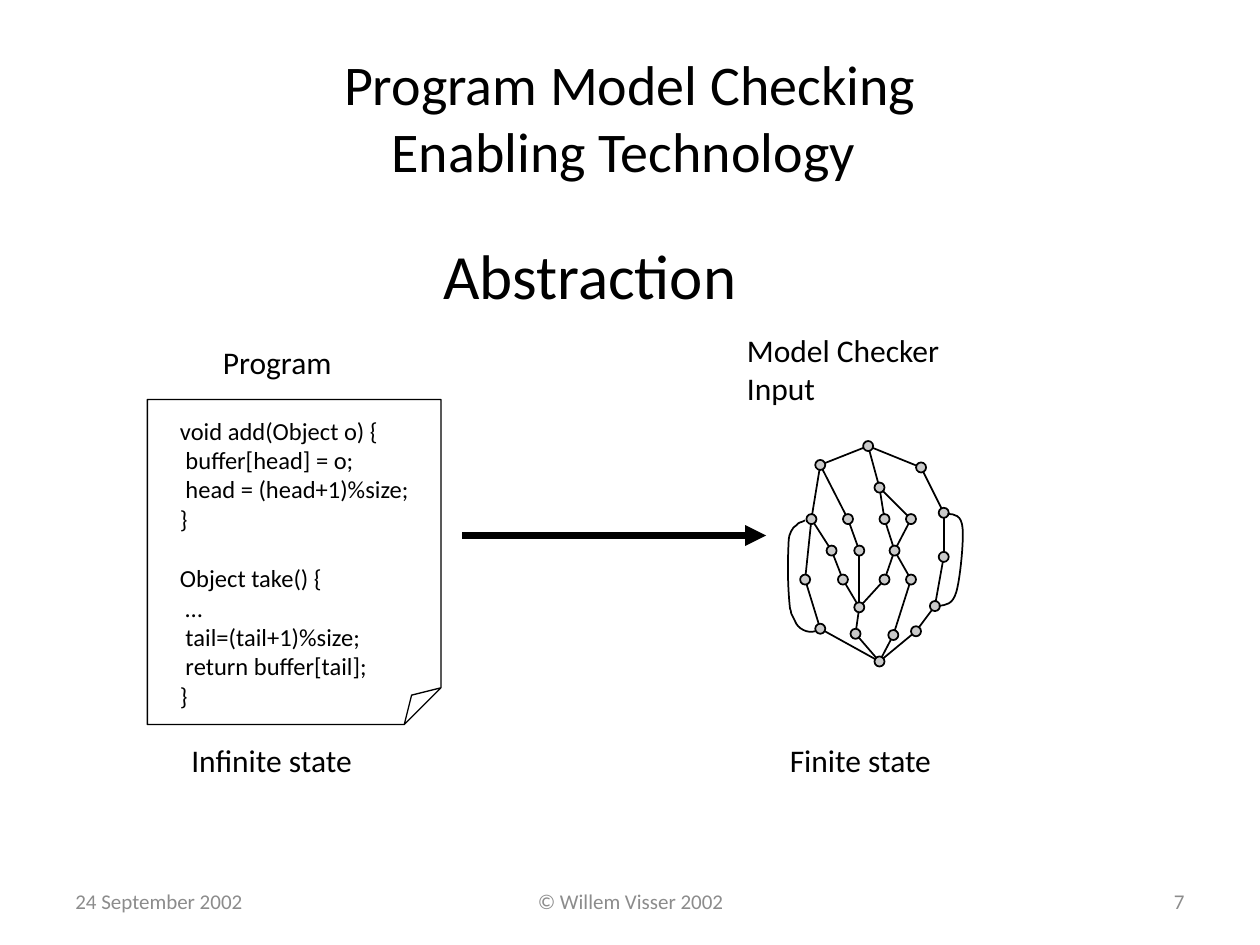
import math

import pptx
import pptx.dml.color
import pptx.enum.shapes
import pptx.enum.text
import pptx.oxml.ns
import pptx.util
from pptx.util import Inches

SHAPES = pptx.enum.shapes.MSO_SHAPE
ALIGN = pptx.enum.text.PP_ALIGN
ANCHOR = pptx.enum.text.MSO_ANCHOR
AUTO_SIZE = pptx.enum.text.MSO_AUTO_SIZE
FONT = "Calibri"
COLORS = {"ink": "000000", "footer": "8C8C8C", "node": "969696"}

TITLE = "Program Model Checking\vEnabling Technology "
# text, box (left, top, width, height), size
LABELS = [
    ("Abstraction", (3.42, 1.83, 2.53, 0.7), 36),
    ("Program", (1.67, 2.67, 1.35, 0.5), 18),
    ("Model Checker\vInput", (5.83, 2.58, 2.26, 0.9), 18),
    ("Infinite state", (1.42, 5.83, 1.87, 0.5), 18),
    ("Finite state", (6.17, 5.83, 1.67, 0.5), 18),
]
FOOTERS = [
    ("24 September 2002", 0.5, 2.33, ALIGN.LEFT),
    ("© Willem Visser 2002", 3.42, 3.17, ALIGN.CENTER),
    ("7", 7.17, 2.33, ALIGN.RIGHT),
]
METHODS = [
    ["void add(Object o) {", " buffer[head] = o;", " head = (head+1)%size;", "}"],
    ["Object take() {", " …", " tail=(tail+1)%size;", " return buffer[tail];", "}"],
]

# State graph: node centres, edges as pairs of node names
NODE_SIZE = 0.08
NODES = {
    "a": (6.89, 3.54), "b": (6.51, 3.69), "c": (6.98, 3.87), "d": (6.44, 4.12),
    "e": (6.73, 4.12), "f": (7.02, 4.12), "g": (7.23, 4.12), "h": (6.6, 4.37),
    "i": (7.1, 4.37), "j": (6.82, 4.37), "k": (7.02, 4.6), "l": (6.69, 4.6),
    "m": (6.82, 4.82), "n": (6.39, 4.6), "o": (7.23, 4.6), "p": (6.51, 4.99),
    "q": (7.09, 5.04), "r": (6.98, 5.25), "s": (6.79, 5.03), "t": (7.49, 4.42),
    "u": (7.49, 4.07), "v": (7.31, 3.71), "w": (7.42, 4.81), "x": (7.27, 5.01),
}
EDGES = ("ab ac av bd be cf cg dh dn ej fi gi hl ik io jm km lm ms np "
         "oq pr qr sr rx tw ut vu wx").split()
# Back edges: start point, then three points for each Bezier segment
BACK_EDGES = [
    [(6.47, 5.01), (6.41, 5.03), (6.33, 4.99), (6.31, 4.93),
     (6.3, 4.91), (6.29, 4.89), (6.28, 4.87),
     (6.28, 4.85), (6.27, 4.83), (6.27, 4.83),
     (6.25, 4.64), (6.25, 4.47), (6.26, 4.28),
     (6.26, 4.25), (6.29, 4.18), (6.32, 4.17),
     (6.34, 4.14), (6.36, 4.15), (6.39, 4.13)],
    [(7.45, 4.81), (7.51, 4.8), (7.56, 4.8), (7.59, 4.7),
     (7.62, 4.6), (7.65, 4.3), (7.64, 4.19),
     (7.63, 4.09), (7.58, 4.08), (7.52, 4.08)],
]


def color(name):
    return pptx.dml.color.RGBColor.from_string(COLORS[name])


def find_xml(shape, tag):
    return shape._element.spPr.find(".//" + pptx.oxml.ns.qn(tag))


def append_xml(parent, tag, **attributes):
    child = parent.makeelement(pptx.oxml.ns.qn(tag), attributes)
    parent.append(child)
    return child


def style_paragraph(paragraph, size, ink="ink", align=ALIGN.LEFT):
    paragraph.alignment = align
    paragraph.font.name = FONT
    paragraph.font.size = pptx.util.Pt(size)
    paragraph.font.color.rgb = color(ink)


def add_text(shapes, lines, box, size, ink="ink", align=ALIGN.LEFT, wrap=True):
    frame = shapes.add_textbox(*map(Inches, box)).text_frame
    frame.word_wrap = wrap
    frame.text = "\n".join(lines)
    for paragraph in frame.paragraphs:
        style_paragraph(paragraph, size, ink, align)
    return frame


def style_outline(shape, width):
    shape.line.color.rgb = color("ink")
    shape.line.width = pptx.util.Pt(width)


def add_line(shapes, start, end, width):
    line = shapes.add_connector(
        pptx.enum.shapes.MSO_CONNECTOR.STRAIGHT, *map(Inches, (*start, *end)))
    style_outline(line, width)
    append_xml(line._element.spPr, "a:effectLst")
    return line


def add_edge(shapes, start, end):
    """Join two nodes from rim to rim."""
    distance = math.dist(start, end)
    trim_x, trim_y = ((b - a) / distance * NODE_SIZE / 2 for a, b in zip(start, end))
    add_line(shapes, (start[0] + trim_x, start[1] + trim_y),
             (end[0] - trim_x, end[1] - trim_y), 1)


def add_node(shapes, center):
    left, top = (value - NODE_SIZE / 2 for value in center)
    node = shapes.add_shape(SHAPES.FLOWCHART_CONNECTOR,
                            *map(Inches, (left, top, NODE_SIZE, NODE_SIZE)))
    node.shadow.inherit = False
    node.fill.solid()
    node.fill.fore_color.rgb = color("node")
    append_xml(find_xml(node, "a:srgbClr"), "a:alpha", val="50000")
    style_outline(node, 1)


def add_curve(shapes, points):
    """Draw the points as a freeform, then turn each three lines into a Bezier."""
    start, *rest = [tuple(map(Inches, point)) for point in points]
    builder = shapes.build_freeform(*start)
    builder.add_line_segments(rest, close=False)
    curve = builder.convert_to_shape()
    curve.shadow.inherit = False
    curve.fill.background()
    style_outline(curve, 1)
    outline = find_xml(curve, "a:path")
    segments = outline.findall(pptx.oxml.ns.qn("a:lnTo"))
    for index in range(0, len(segments), 3):
        bezier = append_xml(outline, "a:cubicBezTo")
        for segment in segments[index:index + 3]:
            bezier.append(segment[0])
            outline.remove(segment)


def main():
    presentation = pptx.Presentation()
    presentation.slide_width, presentation.slide_height = Inches(10), Inches(7.5)
    slide = presentation.slides.add_slide(presentation.slide_layouts[5])
    shapes = slide.shapes

    # Title and footers
    title = shapes.title
    title.left, title.top, title.width, title.height = map(Inches, (0.5, 0.3, 9, 1.25))
    title.text_frame.text = TITLE
    title.text_frame.auto_size = AUTO_SIZE.NONE
    title.text_frame.vertical_anchor = ANCHOR.MIDDLE
    style_paragraph(title.text_frame.paragraphs[0], 32, align=ALIGN.CENTER)
    for text, left, width, align in FOOTERS:
        frame = add_text(shapes, [text], (left, 6.95, width, 0.4), 12, "footer", align)
        frame.vertical_anchor = ANCHOR.MIDDLE

    # Program page with its code
    page = shapes.add_shape(SHAPES.FOLDED_CORNER, *map(Inches, (1.17, 3.17, 2.33, 2.58)))
    append_xml(find_xml(page, "a:avLst"), "a:gd", name="adj", fmla="val 12500")
    page.shadow.inherit = False
    page.fill.background()
    style_outline(page, 0.75)
    code = add_text(shapes, METHODS[0] + METHODS[1], (1.33, 3.25, 2.75, 2.43), 14)
    code.paragraphs[len(METHODS[0])].space_before = pptx.util.Pt(17)

    # State graph
    graph = shapes.add_group_shape().shapes
    for first, second in EDGES:
        add_edge(graph, NODES[first], NODES[second])
    for points in BACK_EDGES:
        add_curve(graph, points)
    for center in NODES.values():
        add_node(graph, center)

    # Abstraction arrow
    arrow = add_line(shapes, (3.67, 4.25), (6.08, 4.25), 4)
    append_xml(find_xml(arrow, "a:ln"), "a:tailEnd", type="triangle")

    # Labels
    for text, box, size in LABELS:
        frame = add_text(shapes, [text], box, size, wrap=False)
        frame.auto_size = AUTO_SIZE.SHAPE_TO_FIT_TEXT

    presentation.save("out.pptx")


if __name__ == "__main__":
    main()
